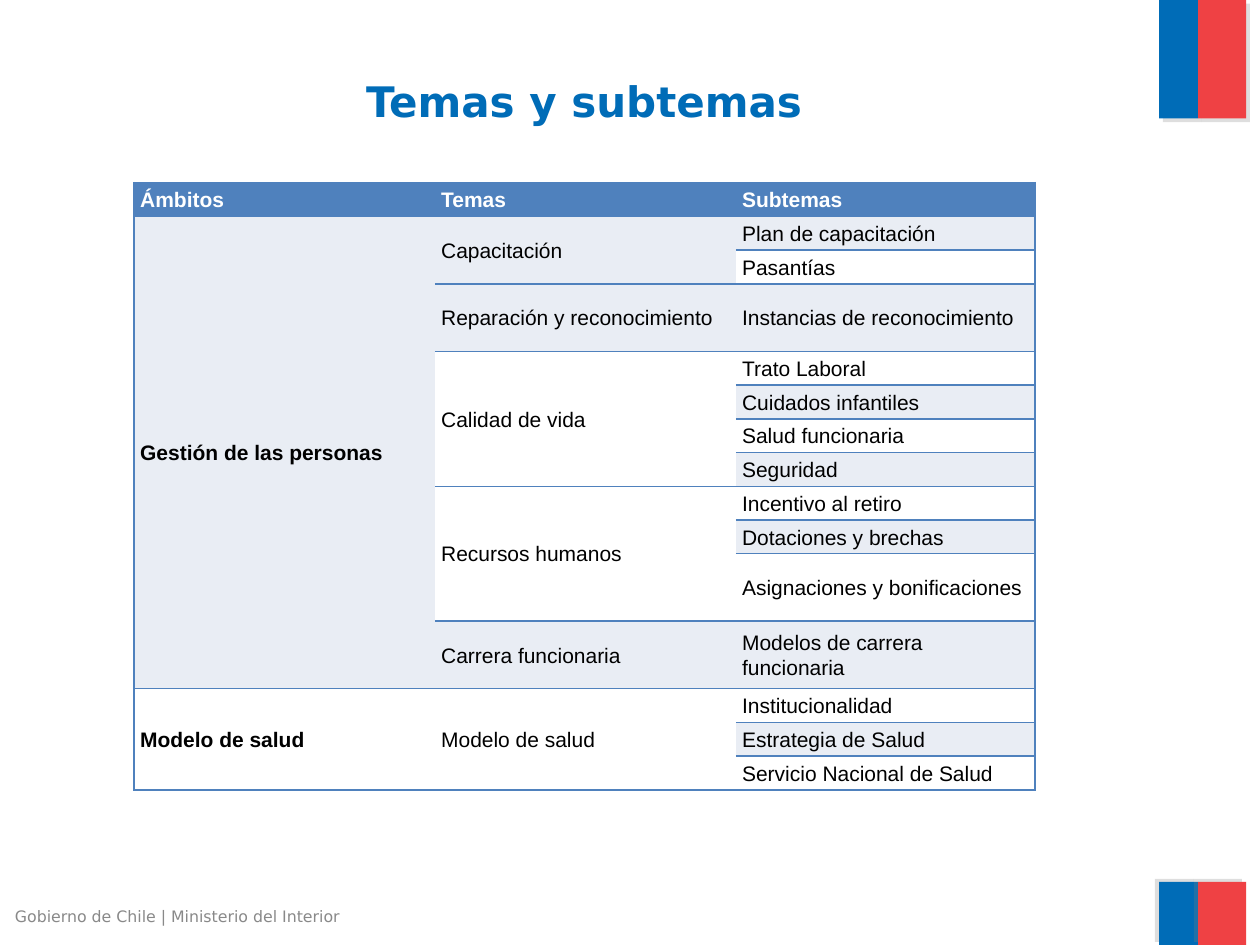
from dataclasses import dataclass

from lxml import etree
from pptx import Presentation
from pptx.dml.color import RGBColor
from pptx.enum.shapes import MSO_SHAPE
from pptx.enum.text import MSO_ANCHOR, PP_ALIGN
from pptx.oxml.ns import qn
from pptx.util import Pt

RECT = MSO_SHAPE.RECTANGLE
MIDDLE = MSO_ANCHOR.MIDDLE
LEFT, CENTER = PP_ALIGN.LEFT, PP_ALIGN.CENTER
NO_STYLE = "{2D5ABB26-0587-4C30-8999-92F81FD0307C}"


@dataclass(frozen=True)
class Theme:
    blue: str = "006CB7"
    red: str = "EF4144"
    shade: str = "808080"
    gray: str = "898989"
    head: str = "4F81BD"
    band: str = "E9EDF4"
    white: str = "FFFFFF"
    black: str = "000000"
    sans: str = "DejaVu Sans"
    body: str = "Arial"
    title: float = 24
    cell: float = 12
    small: float = 9


# Field, then theme, then subthemes; a pair gives a row of double height
HEADS = ["Ámbitos", "Temas", "Subtemas"]
FIELDS = [
    ("Gestión de las personas", [
        ("Capacitación", ["Plan de capacitación", "Pasantías"]),
        ("Reparación y reconocimiento", [("Instancias de reconocimiento", 2)]),
        ("Calidad de vida", ["Trato Laboral", "Cuidados infantiles",
                             "Salud funcionaria", "Seguridad"]),
        ("Recursos humanos", ["Incentivo al retiro", "Dotaciones y brechas",
                              ("Asignaciones y bonificaciones", 2)]),
        ("Carrera funcionaria", [("Modelos de carrera funcionaria", 2)]),
    ]),
    ("Modelo de salud", [
        ("Modelo de salud", ["Institucionalidad", "Estrategia de Salud",
                             "Servicio Nacional de Salud"]),
    ]),
]


class Deck:
    def __init__(self, slide, theme):
        self.slide = slide
        self.theme = theme

    def font(self, para, face, size, color, bold=False):
        font = para.font
        font.name, font.size, font.bold = face, Pt(size), bold
        font.color.rgb = RGBColor.from_string(color)

    def text(self, box, words, size, color, bold=False, align=LEFT):
        frame = self.slide.shapes.add_textbox(*map(Pt, box)).text_frame
        frame.word_wrap = True
        frame.vertical_anchor = MIDDLE
        para = frame.paragraphs[0]
        para.text, para.alignment = words, align
        self.font(para, self.theme.sans, size, color, bold)

    def block(self, box, color, angle):
        shape = self.slide.shapes.add_shape(RECT, *map(Pt, box))
        shape.fill.solid()
        shape.fill.fore_color.rgb = RGBColor.from_string(color)
        shape.line.fill.background()
        shape.shadow.inherit = False
        effects = shape.element.spPr.find(qn("a:effectLst"))
        drop = etree.SubElement(effects, qn("a:outerShdw"), blurRad="0",
                                dist=str(Pt(3)), dir=str(angle * 60000),
                                algn="ctr", rotWithShape="0")
        tint = etree.SubElement(drop, qn("a:srgbClr"), val=self.theme.shade)
        etree.SubElement(tint, qn("a:alpha"), val="25000")

    def edges(self, cell, sides):
        props = cell._tc.get_or_add_tcPr()
        for side in sides:
            line = etree.SubElement(props, qn("a:ln" + side), w=str(Pt(1)))
            fill = etree.SubElement(line, qn("a:solidFill"))
            etree.SubElement(fill, qn("a:srgbClr"), val=self.theme.head)

    def cell(self, grid, row, col, words, fill, color, bold=False, span=1):
        cell = grid.cell(row, col)
        if span > 1:
            cell.merge(grid.cell(row + span - 1, col))
        cell.text = words
        cell.vertical_anchor = MIDDLE
        cell.margin_left = cell.margin_right = Pt(3.6)
        cell.margin_top = cell.margin_bottom = 0
        self.edges(cell, ["LTB", "TB", "RTB"][col])
        cell.fill.solid()
        cell.fill.fore_color.rgb = RGBColor.from_string(fill)
        para = cell.text_frame.paragraphs[0]
        para.line_spacing = 1.07
        self.font(para, self.theme.body, self.theme.cell, color, bold)

    def table(self, left, top, widths, unit, heads, fields):
        look = self.theme
        count = 1 + sum(len(subs) for _, topics in fields for _, subs in topics)
        frame = self.slide.shapes.add_table(
            count, len(heads), Pt(left), Pt(top), Pt(sum(widths)), Pt(unit * count))
        grid = frame.table
        grid.first_row = grid.horz_banding = False
        grid._tbl.tblPr.find(qn("a:tableStyleId")).text = NO_STYLE
        for col, width in zip(grid.columns, widths):
            col.width = Pt(width)
        for row in grid.rows:
            row.height = Pt(unit)

        def put(row, col, words, span=1, bold=False):
            fill = look.band if row % 2 else look.white
            self.cell(grid, row, col, words, fill, look.black, bold, span)

        for col, words in enumerate(heads):
            self.cell(grid, 0, col, words, look.head, look.white, True)
        row = 1
        for field, topics in fields:
            put(row, 0, field, sum(len(subs) for _, subs in topics), True)
            for topic, subs in topics:
                put(row, 1, topic, len(subs))
                for sub in subs:
                    words, lines = (sub, 1) if isinstance(sub, str) else sub
                    grid.rows[row].height = Pt(unit * lines)
                    put(row, 2, words)
                    row += 1


def main():
    show = Presentation()
    show.slide_width, show.slide_height = Pt(720), Pt(540)
    look = Theme()
    deck = Deck(show.slides.add_slide(show.slide_layouts[6]), look)

    # Colour blocks at the top and bottom right
    for top, height, angle in [(0, 67.7, 45), (504, 36, 215)]:
        deck.block((662.4, top, 22.3, height), look.blue, angle)
        deck.block((684.7, top, 27.4, height), look.red, angle)

    # Title and footer
    deck.text((12.24, 12.24, 643, 90), "Temas y subtemas",
              look.title, look.blue, True, CENTER)
    deck.text((1.44, 514, 228, 19.5), "Gobierno de Chile | Ministerio del Interior",
              look.small, look.gray)

    # Table of themes
    deck.table(76.5, 104.4, [172, 172, 171], 19.28, HEADS, FIELDS)

    show.save("out.pptx")


if __name__ == "__main__":
    main()
